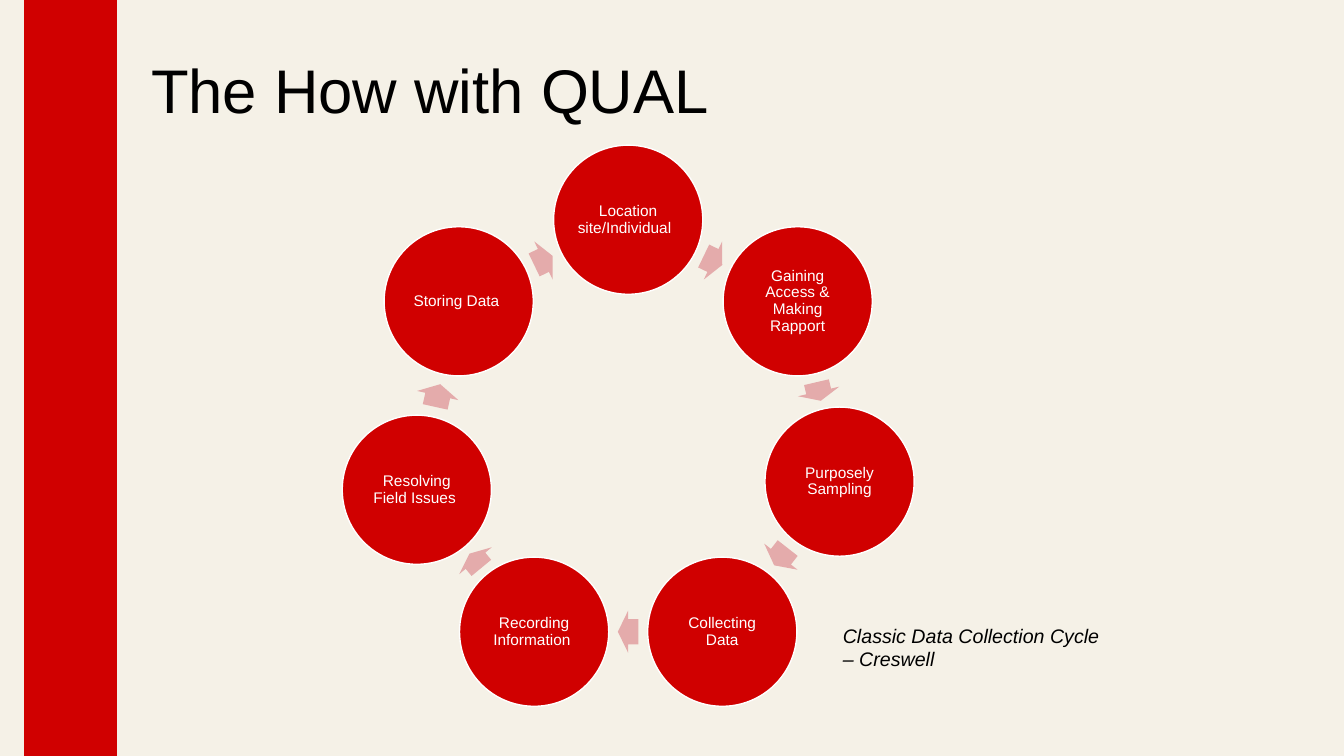
import math

import pptx
import pptx.dml.color
import pptx.enum.shapes
import pptx.enum.text
import pptx.util

WIDTH, HEIGHT = pptx.util.Inches(13.33), pptx.util.Inches(7.5)
COLUMN, ROW = WIDTH / 100, HEIGHT / 100
FONT = "Arial"
CREAM, RED, PINK, WHITE, BLACK = "F5F1E7", "D00000", "E4ABAB", "FFFFFF", "000000"

TITLE = "The How with QUAL"
CAPTION = ["Classic Data Collection Cycle", "– Creswell"]
STEPS = [
    ("Location site/Individual\t", 0),
    ("Gaining Access & Making Rapport", 0),
    ("Purposely Sampling", -0.4),
    ("Collecting Data", 0),
    ("Recording Information ", 0),
    ("Resolving Field Issues ", 0.67),
    ("Storing Data ", 0),
]

BAND_AREA = (1.8, 0, 6.9, 100)
TITLE_AREA = (10.5, 5.33, 82.67, 14)
CAPTION_AREA = (61.97, 81.87, 23.78, 7.6)
RING_CENTER = (46.74 * COLUMN, 57.73 * ROW)
RING_RADIUS = 28.67 * ROW
DIAMETER = 19.73 * ROW
ARROW_HEIGHT = 5.6 * ROW
ARROW_SHARE = 0.53
STEP_INSET = pptx.util.Inches(0.02)


def color(value):
    return pptx.dml.color.RGBColor.from_string(value)


def area(left, top, width, height):
    return [round(length) for length in (left * COLUMN, top * ROW, width * COLUMN, height * ROW)]


def add_shape(slide, kind, center, width, height, fill):
    left, top = center[0] - width / 2, center[1] - height / 2
    shape = slide.shapes.add_shape(kind, round(left), round(top), round(width), round(height))
    shape.shadow.inherit = False
    shape.fill.solid()
    shape.fill.fore_color.rgb = color(fill)
    shape.line.fill.background()
    return shape


def write(frame, lines, size, ink, italic=False, spacing=None, alignment=None):
    frame.word_wrap = True
    for index, line in enumerate(lines):
        paragraph = frame.add_paragraph() if index else frame.paragraphs[0]
        paragraph.alignment = alignment
        paragraph.line_spacing = spacing
        run = paragraph.add_run()
        run.text = line
        run.font.name = FONT
        run.font.size = pptx.util.Pt(size)
        run.font.italic = italic
        run.font.color.rgb = color(ink)


def add_step(slide, center, label):
    circle = add_shape(slide, pptx.enum.shapes.MSO_SHAPE.OVAL, center, DIAMETER, DIAMETER, RED)
    circle.line.color.rgb = color(WHITE)
    circle.line.width = pptx.util.Pt(1)
    frame = circle.text_frame
    frame.margin_left = frame.margin_right = STEP_INSET
    frame.margin_top = frame.margin_bottom = STEP_INSET
    frame.vertical_anchor = pptx.enum.text.MSO_ANCHOR.MIDDLE
    write(frame, [label], 11, WHITE, spacing=0.9, alignment=pptx.enum.text.PP_ALIGN.CENTER)


def add_arrow(slide, start, end):
    across, down = end[0] - start[0], end[1] - start[1]
    middle = ((start[0] + end[0]) / 2, (start[1] + end[1]) / 2)
    length = ARROW_SHARE * (math.hypot(across, down) - DIAMETER)
    kind = pptx.enum.shapes.MSO_SHAPE.RIGHT_ARROW
    arrow = add_shape(slide, kind, middle, length, ARROW_HEIGHT, PINK)
    arrow.adjustments[0] = 0.6
    arrow.adjustments[1] = 0.5
    arrow.rotation = math.degrees(math.atan2(down, across)) % 360


def step_centers():
    centers = []
    for index, (label, nudge) in enumerate(STEPS):
        angle = 2 * math.pi * index / len(STEPS)
        x = RING_CENTER[0] + RING_RADIUS * math.sin(angle)
        y = RING_CENTER[1] - RING_RADIUS * math.cos(angle) + nudge * ROW
        centers.append((x, y))
    return centers


def main():
    """Build the data collection cycle slide."""
    presentation = pptx.Presentation()
    presentation.slide_width, presentation.slide_height = WIDTH, HEIGHT
    slide = presentation.slides.add_slide(presentation.slide_layouts[6])
    slide.background.fill.solid()
    slide.background.fill.fore_color.rgb = color(CREAM)

    left, top, width, height = area(*BAND_AREA)
    band_center = (left + width / 2, top + height / 2)
    add_shape(slide, pptx.enum.shapes.MSO_SHAPE.RECTANGLE, band_center, width, height, RED)

    title = slide.shapes.add_textbox(*area(*TITLE_AREA)).text_frame
    title.vertical_anchor = pptx.enum.text.MSO_ANCHOR.MIDDLE
    write(title, [TITLE], 44, BLACK, spacing=0.9)

    centers = step_centers()
    for index, (label, nudge) in enumerate(STEPS):
        add_step(slide, centers[index], label)
        add_arrow(slide, centers[index], centers[(index + 1) % len(centers)])

    caption = slide.shapes.add_textbox(*area(*CAPTION_AREA)).text_frame
    write(caption, CAPTION, 14, BLACK, italic=True)
    presentation.save("out.pptx")


if __name__ == "__main__":
    main()
